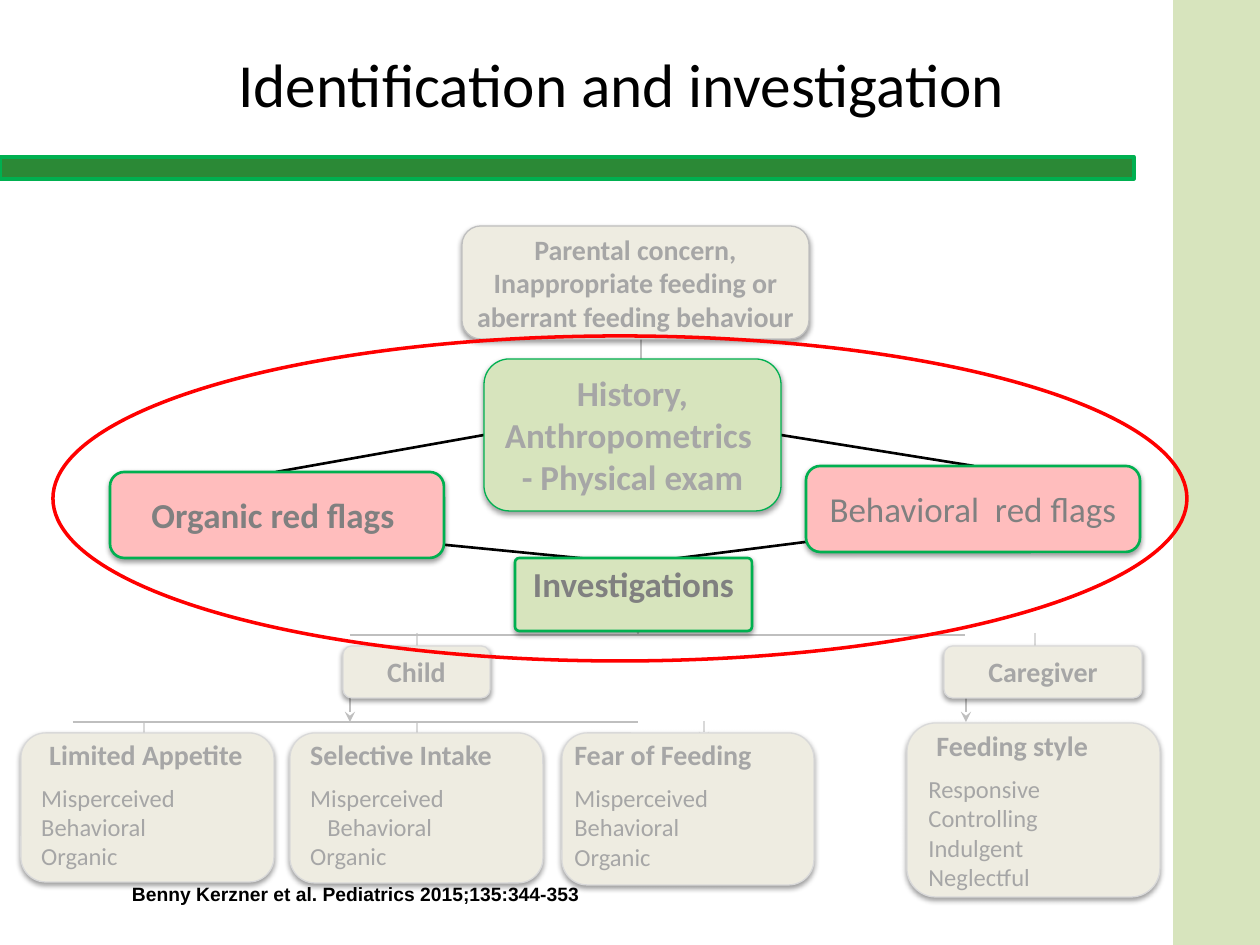
from lxml import etree
from pptx import Presentation
from pptx.dml.color import RGBColor
from pptx.enum.shapes import MSO_CONNECTOR, MSO_SHAPE
from pptx.enum.text import MSO_ANCHOR, PP_ALIGN
from pptx.oxml.ns import qn
from pptx.util import Emu, Pt

RECT, ROUND, OVAL = MSO_SHAPE.RECTANGLE, MSO_SHAPE.ROUNDED_RECTANGLE, MSO_SHAPE.OVAL
STRAIGHT = MSO_CONNECTOR.STRAIGHT
TOP, MIDDLE, BOTTOM = MSO_ANCHOR.TOP, MSO_ANCHOR.MIDDLE, MSO_ANCHOR.BOTTOM
LEFT, CENTER = PP_ALIGN.LEFT, PP_ALIGN.CENTER

BLACK = RGBColor(0x00, 0x00, 0x00)
RED = RGBColor(0xFF, 0x00, 0x00)
GREEN = RGBColor(0x00, 0xB0, 0x50)
DARK = RGBColor(0x2B, 0x89, 0x36)
LIME = RGBColor(0xD7, 0xE4, 0xBD)
PINK = RGBColor(0xFF, 0xBD, 0xBD)
CREAM = RGBColor(0xEE, 0xEC, 0xE1)
PALE = RGBColor(0xD9, 0xD9, 0xD9)
SILVER = RGBColor(0xBF, 0xBF, 0xBF)
GREY = RGBColor(0xA6, 0xA6, 0xA6)
SLATE = RGBColor(0x80, 0x80, 0x80)


def px(n):
    return Emu(round(n * 914400 / 126))


def write(frame, text, size=16, color=GREY, bold=True, font="Calibri",
          align=CENTER, indent=0, after=0, lead=None):
    """Fill the empty first paragraph, or add one after it."""
    para = frame.paragraphs[0]
    if para.runs:
        para = frame.add_paragraph()
    para.text = text
    para.alignment = align
    para.space_after = Pt(after)
    if lead:
        para.line_spacing = lead
    if indent:
        para._p.get_or_add_pPr().set("marL", str(px(indent)))
    for run in para.runs:
        run.font.name, run.font.size, run.font.bold = font, Pt(size), bold
        run.font.color.rgb = color


def pad(frame, inset, anchor):
    frame.word_wrap = True
    frame.vertical_anchor = anchor
    (frame.margin_left, frame.margin_top,
     frame.margin_right, frame.margin_bottom) = map(px, inset)


def shade(shape):
    """Cast a soft shadow straight down."""
    effects = etree.SubElement(shape._element.spPr, qn("a:effectLst"))
    outer = etree.SubElement(effects, qn("a:outerShdw"), blurRad=str(Pt(3.1)),
                             dist=str(Pt(1.6)), dir="5400000", rotWithShape="0")
    color = etree.SubElement(outer, qn("a:srgbClr"), val="000000")
    etree.SubElement(color, qn("a:alpha"), val="38000")


def draw(slide, kind, spot, fill, line, width):
    shape = slide.shapes.add_shape(kind, *map(px, spot))
    if fill is None:
        shape.fill.background()
    else:
        shape.fill.solid()
        shape.fill.fore_color.rgb = fill
    shape.line.color.rgb = line
    shape.line.width = Pt(width)
    if kind != ROUND:
        shape.shadow.inherit = False
    return shape


def box(slide, spot, fill=CREAM, line=PALE, width=0.75, inset=(5, 5, 5, 5),
        anchor=MIDDLE, curve=None):
    """Draw a shadowed rounded box and return its text frame."""
    shape = draw(slide, ROUND, spot, fill, line, width)
    if curve:
        shape.adjustments[0] = curve
    shade(shape)
    pad(shape.text_frame, inset, anchor)
    return shape.text_frame


def card(slide, spot, title, items, head, body):
    """Draw a box with a heading and a list; head and body are indents."""
    frame = box(slide, spot, inset=(5, 0, 5, 5), anchor=TOP)
    write(frame, title, align=LEFT, indent=head, after=6, lead=0.95)
    for item, step in items:
        write(frame, item, size=14, bold=False, align=LEFT, indent=body + step)


def label(slide, spot, inset, anchor, text, **form):
    frame = slide.shapes.add_textbox(*map(px, spot)).text_frame
    pad(frame, inset, anchor)
    write(frame, text, **form)


def link(slide, ends, color, arrow=False):
    line = slide.shapes.add_connector(STRAIGHT, *map(px, ends))
    line.line.color.rgb = color
    line.line.width = Pt(1.5)
    if arrow:
        stroke = line.line._get_or_add_ln()
        etree.SubElement(stroke, qn("a:tailEnd"), type="stealth")
    etree.SubElement(line._element.spPr, qn("a:effectLst"))


def links(slide):
    for x, top, end in ((1035, 633, 665), (417, 633, 664), (144, 722, 743),
                        (704, 721, 742), (417, 722, 743)):
        link(slide, (x, top, x, end), PALE, arrow=True)
    for x, top, end in ((350, 693, 722), (966, 693, 722), (638, 602, 635)):
        link(slide, (x, top, x, end), SILVER, arrow=True)
    for ends in ((641, 325, 641, 398), (73, 722, 638, 722), (350, 635, 965, 635)):
        link(slide, ends, SILVER)
    for ends in ((484, 435, 276, 472), (974, 466, 781, 435),
                 (365, 537, 630, 563), (908, 529, 640, 563)):
        link(slide, ends, BLACK)


def flow(slide):
    exam = box(slide, (484, 359, 297, 152), LIME, GREEN)
    write(exam, "History,\nAnthropometrics \n- Physical exam", size=20)
    start = box(slide, (462, 226, 347, 113), line=SILVER)
    write(start, "Parental concern,\nInappropriate feeding or\naberrant feeding behaviour")

    for x, wide, name in ((343, 147, "Child"), (944, 198, "Caregiver")):
        role = box(slide, (x, 646, wide, 52), inset=(13, 6, 13, 6), anchor=TOP)
        write(role, name)
    for x, y, name, bold in ((110, 472, "Organic red flags ", True),
                             (806, 466, "Behavioral  red flags", False)):
        flag = box(slide, (x, y, 334, 86), PINK, GREEN, 1.5)
        write(flag, name, size=20, color=SLATE, bold=bold)
    tests = box(slide, (515, 558, 237, 73), LIME, GREEN, 1.5,
                inset=(15, 10, 15, 5), anchor=TOP, curve=0.06)
    write(tests, "Investigations", size=20, color=SLATE, lead=0.85)


def cards(slide):
    kinds = (("Misperceived", 0), ("Behavioral", 0), ("Organic", 0))
    mixed = (("Misperceived", 0), ("Behavioral", 17), ("Organic", 0))
    styles = [(name, 0) for name in
              ("Responsive", "Controlling", "Indulgent", "Neglectful")]
    card(slide, (21, 733, 253, 149), "Limited Appetite", kinds, 16, 8)
    card(slide, (290, 733, 253, 150), "Selective Intake", mixed, 8, 8)
    card(slide, (907, 723, 253, 174), "Feeding style", styles, 16, 8)
    card(slide, (562, 733, 252, 152), "Fear of Feeding", kinds, 0, 0)


def main():
    deck = Presentation()
    deck.slide_width, deck.slide_height = px(1260), px(945)
    slide = deck.slides.add_slide(deck.slide_layouts[6])
    draw(slide, RECT, (1175, 0, 85, 945), LIME, LIME, 2)
    draw(slide, RECT, (0, 157, 1134, 22), DARK, GREEN, 2)
    links(slide)
    flow(slide)
    cards(slide)
    draw(slide, OVAL, (53, 336, 1134, 325), None, RED, 2)
    label(slide, (63, 0, 1104, 126), (13, 6, 0, 6), BOTTOM,
          "Identification and investigation", size=35, color=BLACK, bold=False)
    label(slide, (132, 882, 541, 32), (0, 0, 0, 0), TOP,
          "Benny Kerzner et al. Pediatrics 2015;135:344-353",
          size=11, color=BLACK, font="Arial", align=LEFT)
    deck.save("out.pptx")


if __name__ == "__main__":
    main()
